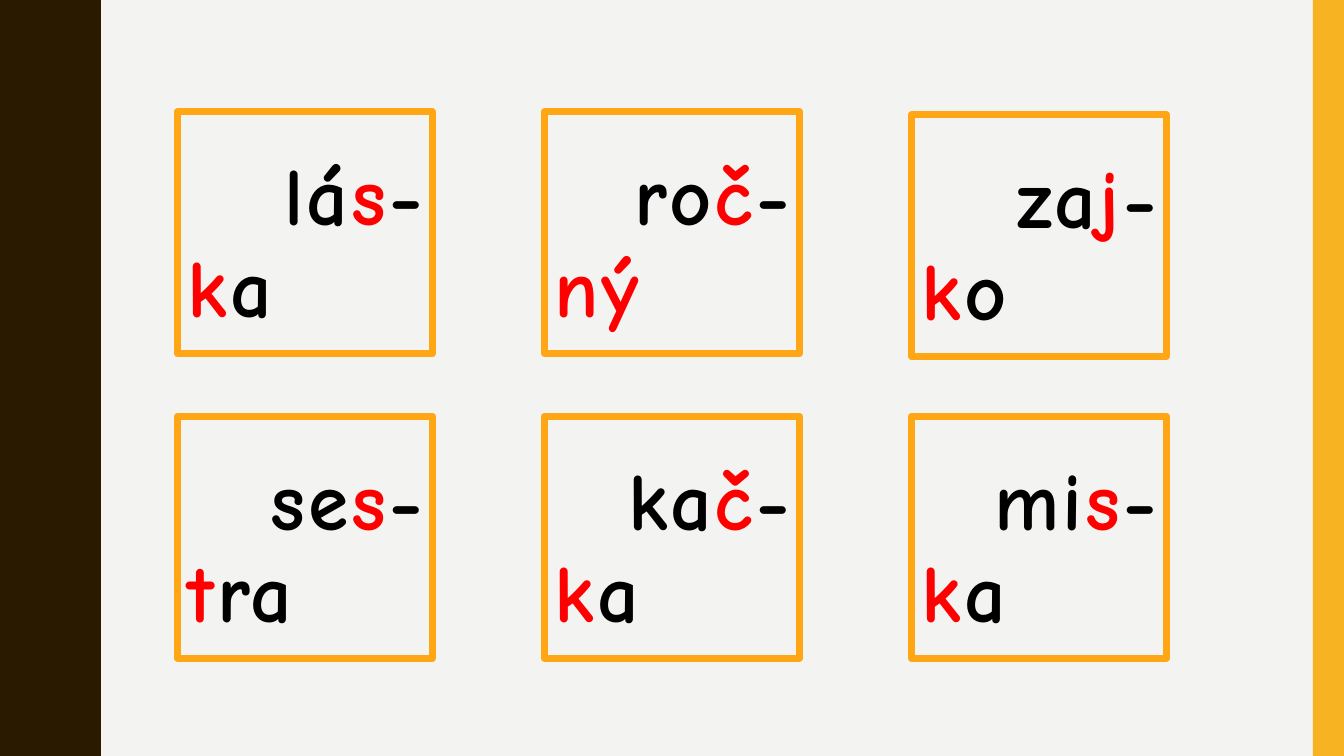
from pptx import Presentation
from pptx.dml.color import RGBColor
from pptx.enum.shapes import MSO_SHAPE
from pptx.enum.text import MSO_ANCHOR, PP_ALIGN
from pptx.util import Inches, Pt

RECT = MSO_SHAPE.RECTANGLE
TOP = MSO_ANCHOR.TOP
LEFT, RIGHT = PP_ALIGN.LEFT, PP_ALIGN.RIGHT

PAPER, BROWN, GOLD, ORANGE = "F3F3F2", "2A1A00", "F8B323", "FFA615"
BLACK, RED = "000000", "FF0000"
WIDTH, HEIGHT = 13.33, 7.5
WAVE = 1.5
CREST = [
    (0.78, 0), (0.78, 0.07), (0.79, 0.14), (0.8, 0.2), (0.81, 0.25),
    (0.85, 0.33), (0.89, 0.42), (0.93, 0.5), (0.95, 0.55), (0.96, 0.61),
    (0.97, 0.68), (0.97, 0.75),
]
WORDS = [
    [
        ([("lá", BLACK), ("s", RED), ("-", BLACK)], [("k", RED), ("a", BLACK)], 1.11),
        ([("ro", BLACK), ("č", RED), ("-", BLACK)], [("ný", RED)], 1.11),
        ([("za", BLACK), ("j", RED), ("-", BLACK)], [("k", RED), ("o", BLACK)], 1.14),
    ],
    [
        ([("se", BLACK), ("s", RED), ("-", BLACK)], [("t", RED), ("ra", BLACK)], 4.13),
        ([("ka", BLACK), ("č", RED), ("-", BLACK)], [("k", RED), ("a", BLACK)], 4.13),
        ([("mi", BLACK), ("s", RED), ("-", BLACK)], [("k", RED), ("a", BLACK)], 4.13),
    ],
]


def paint(fill, color):
    fill.solid()
    fill.fore_color.rgb = RGBColor.from_string(color)


def add_wave(slide):
    cycle = CREST + [(x, WAVE - y) for x, y in reversed(CREST[:-1])]
    edge = [(x, y + WAVE * turn) for turn in range(5) for x, y in cycle]
    pen = slide.shapes.build_freeform(0, 0, scale=Inches(1))
    pen.add_line_segments(edge + [(0, HEIGHT)], close=True)
    wave = pen.convert_to_shape()
    wave.shadow.inherit = False
    paint(wave.fill, BROWN)
    wave.line.fill.background()


def add_rect(slide, left, top, width, height):
    rect = slide.shapes.add_shape(
        RECT, Inches(left), Inches(top), Inches(width), Inches(height)
    )
    rect.shadow.inherit = False
    return rect


def add_stripe(slide):
    stripe = add_rect(slide, 13.02, 0, 0.31, HEIGHT)
    paint(stripe.fill, GOLD)
    stripe.line.fill.background()


def write_line(para, parts, align):
    para.alignment = align
    para.line_spacing = 0.9
    para.font.name = "Comic Neue"
    para.font.size = Pt(58.5)
    para.font.bold = True
    for text, color in parts:
        run = para.add_run()
        run.text = text
        paint(run.font.fill, color)
        run.font._element.set("spc", "200")


def add_card(slide, left, top, start, end):
    card = add_rect(slide, left, top, 2.53, 2.4)
    card.fill.background()
    paint(card.line.fill, ORANGE)
    card.line.width = Pt(5)
    frame = card.text_frame
    frame.word_wrap = True
    frame.vertical_anchor = TOP
    frame.margin_top = Inches(0.43)
    write_line(frame.paragraphs[0], start, RIGHT)
    last = frame.add_paragraph()
    write_line(last, end, LEFT)
    last.space_before = Pt(2.3)


def main():
    deck = Presentation()
    deck.slide_width = Inches(WIDTH)
    deck.slide_height = Inches(HEIGHT)
    slide = deck.slides.add_slide(deck.slide_layouts[6])
    paint(slide.background.fill, PAPER)
    add_wave(slide)
    add_stripe(slide)
    for row in WORDS:
        for col, (start, end, top) in enumerate(row):
            add_card(slide, 1.76 + 3.64 * col, top, start, end)
    deck.save("out.pptx")


if __name__ == "__main__":
    main()
